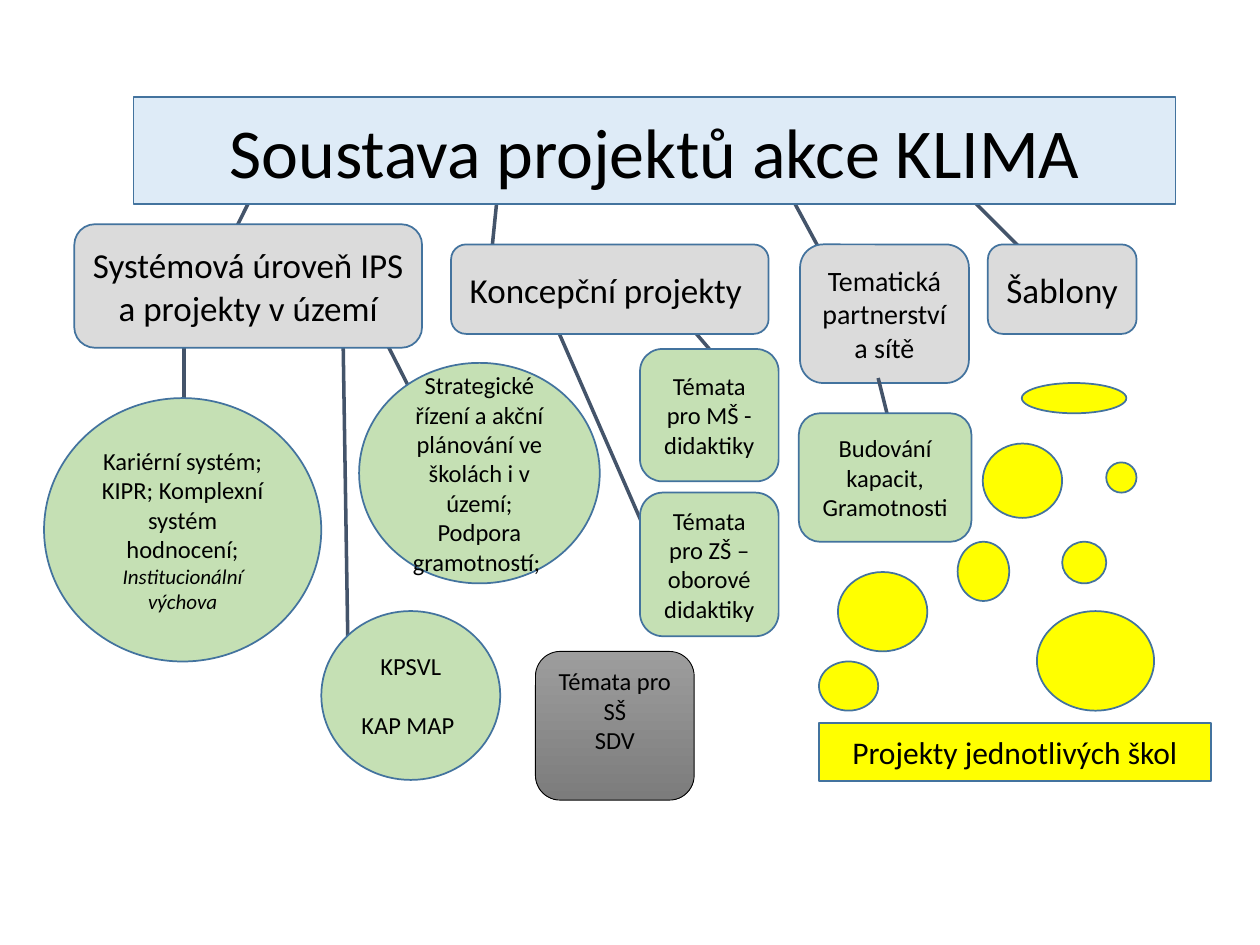
from lxml import etree
from pptx import Presentation
from pptx.dml.color import RGBColor
from pptx.enum.shapes import MSO_CONNECTOR as Connector, MSO_SHAPE as Geometry
from pptx.enum.text import MSO_ANCHOR as Anchor, MSO_AUTO_SIZE as AutoSize, PP_ALIGN as Align
from pptx.oxml import parse_xml
from pptx.oxml.ns import nsdecls, qn
from pptx.util import Inches, Pt

FONT = "Calibri"
BLACK = RGBColor(0x00, 0x00, 0x00)
OUTLINE = RGBColor(0x43, 0x73, 0x9E)
LINK = RGBColor(0x44, 0x54, 0x6A)
PALE_BLUE = RGBColor(0xDE, 0xEB, 0xF7)
LIGHT_GREY = RGBColor(0xDB, 0xDB, 0xDB)
GREEN = RGBColor(0xC5, 0xE0, 0xB4)
YELLOW = RGBColor(0xFF, 0xFF, 0x00)
GREY_TOP = RGBColor(0x9D, 0x9D, 0x9D)
GREY_BOTTOM = RGBColor(0x7C, 0x7C, 0x7C)


def paint(shape, color):
    shape.fill.solid()
    shape.fill.fore_color.rgb = color
    shape.line.color.rgb = OUTLINE
    shape.line.width = Pt(1)


def write(shape, text, size):
    frame = shape.text_frame
    frame.text = text
    frame.word_wrap = True
    frame.auto_size = AutoSize.NONE
    frame.vertical_anchor = Anchor.MIDDLE
    for paragraph in frame.paragraphs:
        paragraph.alignment = Align.CENTER
        for run in paragraph.runs:
            run.font.name = FONT
            run.font.size = Pt(size)
            run.font.color.rgb = BLACK


def add_node(slide, region, place, geometry, color, text="", size=14):
    left, top, width, height = place
    shape = slide.shapes.add_shape(
        geometry, Inches(region[0] + left), Inches(region[1] + top),
        Inches(width), Inches(height))
    shape.shadow.inherit = False
    paint(shape, color)
    if text:
        write(shape, text, size)
    return shape


def add_links(slide, region, links):
    left, top = region[:2]
    for x1, y1, x2, y2 in links:
        link = slide.shapes.add_connector(
            Connector.STRAIGHT, Inches(left + x1), Inches(top + y1),
            Inches(left + x2), Inches(top + y2))
        link.line.color.rgb = LINK
        link.line.width = Pt(2)
        etree.SubElement(link._element.spPr, qn("a:effectLst"))


def add_title(slide, region):
    add_links(slide, region, [
        (1.1, 0.46, 0.71, 1.25), (2.92, 0.46, 2.84, 1.25),
        (5.04, 0.46, 5.51, 1.33), (6.3, 0.46, 7.17, 1.33)])
    title = slide.shapes.title
    title.left, title.top, title.width, title.height = map(Inches, region)
    title._element.spPr.append(parse_xml(
        f'<a:prstGeom {nsdecls("a")} prst="roundRect"><a:avLst/></a:prstGeom>'))
    paint(title, PALE_BLUE)
    write(title, "Soustava projektů akce KLIMA", 40)
    slide.shapes._spTree.append(title._element)


def add_system_branch(slide, region):
    add_links(slide, region, [
        (1.11, 0.71, 1.11, 1.62), (2.37, 0.71, 2.41, 3.27), (2.6, 0.71, 3, 1.5)])
    add_node(slide, region, (0.24, 0, 2.76, 0.98), Geometry.ROUNDED_RECTANGLE,
             LIGHT_GREY, "Systémová úroveň IPS a projekty v území", 20)
    career = add_node(
        slide, region, (0, 1.38, 2.2, 2.09), Geometry.OVAL, GREEN,
        "Kariérní systém;\nKIPR; Komplexní systém hodnocení;\nInstitucionální výchova")
    institution = career.text_frame.paragraphs[-1].runs[0].font
    institution.size = Pt(12)
    institution.italic = True
    plans = add_node(slide, region, (2.2, 3.07, 1.42, 1.34), Geometry.OVAL,
                     GREEN, "KPSVL\nKAP MAP ")
    plans.text_frame.paragraphs[-1].space_before = Pt(17)
    add_node(slide, region, (2.5, 1.1, 1.91, 1.75), Geometry.OVAL, GREEN,
             "Strategické řízení a akční plánování ve školách i v území; "
             "Podpora gramotností; ")


def add_concept_branch(slide, region):
    add_links(slide, region, [(0.79, 0.55, 1.58, 2.36), (1.81, 0.55, 2.05, 0.83)])
    rounded = Geometry.ROUNDED_RECTANGLE
    add_node(slide, region, (0, 0, 2.52, 0.71), rounded, LIGHT_GREY,
             "Koncepční projekty ", 20)
    add_node(slide, region, (1.5, 0.83, 1.1, 1.05), rounded, GREEN,
             "Témata pro MŠ - didaktiky")
    add_node(slide, region, (1.5, 1.97, 1.1, 1.14), rounded, GREEN,
             "Témata pro ZŠ – oborové didaktiky")
    secondary = add_node(slide, region, (0.67, 3.23, 1.26, 1.18), rounded,
                         LIGHT_GREY, "Témata pro SŠ\nSDV")
    secondary.fill.gradient()
    secondary.fill.gradient_angle = 270
    for stop, color in zip(secondary.fill.gradient_stops, (GREY_TOP, GREY_BOTTOM)):
        stop.color.rgb = color
    secondary.line.color.rgb = BLACK
    secondary.line.width = Pt(0.5)
    secondary.text_frame.margin_bottom = Inches(0.29)


def add_partnership_branch(slide, region):
    add_node(slide, region, (0.01, 0, 1.34, 1.1), Geometry.ROUNDED_RECTANGLE,
             LIGHT_GREY, "Tematická partnerství a sítě", 16)
    add_links(slide, region, [(0.63, 1.06, 0.73, 1.46)])
    add_node(slide, region, (0, 1.34, 1.37, 1.02), Geometry.ROUNDED_RECTANGLE,
             GREEN, "Budování kapacit, Gramotnosti")


def add_templates_branch(slide, region):
    add_node(slide, region, (0, 0, *region[2:]), Geometry.ROUNDED_RECTANGLE,
             LIGHT_GREY, "Šablony", 20)


def add_school_projects(slide, region):
    bubbles = [
        (0.15, 1.5, 0.71, 0.63), (1.3, 0.48, 0.63, 0.59),
        (1.93, 1.26, 0.35, 0.33), (1.73, 1.81, 0.93, 0.79),
        (0, 2.21, 0.47, 0.39), (1.61, 0, 0.83, 0.24),
        (2.28, 0.63, 0.24, 0.24), (1.1, 1.26, 0.41, 0.47)]
    for bubble in bubbles:
        add_node(slide, region, bubble, Geometry.OVAL, YELLOW)
    add_node(slide, region, (0, 2.7, region[2], 0.46), Geometry.RECTANGLE,
             YELLOW, "Projekty jednotlivých škol", 18)


def main():
    presentation = Presentation()
    presentation.slide_width = Inches(10)
    presentation.slide_height = Inches(7.5)
    slide = presentation.slides.add_slide(presentation.slide_layouts[5])
    add_title(slide, (1.06, 0.77, 8.27, 0.85))
    add_system_branch(slide, (0.35, 1.78, 4.41, 4.41))
    add_concept_branch(slide, (3.58, 1.94, 2.6, 4.41))
    add_partnership_branch(slide, (6.34, 1.94, 1.37, 2.36))
    add_templates_branch(slide, (7.84, 1.94, 1.18, 0.71))
    add_school_projects(slide, (6.5, 3.04, 3.11, 3.16))
    presentation.save("out.pptx")


if __name__ == "__main__":
    main()
